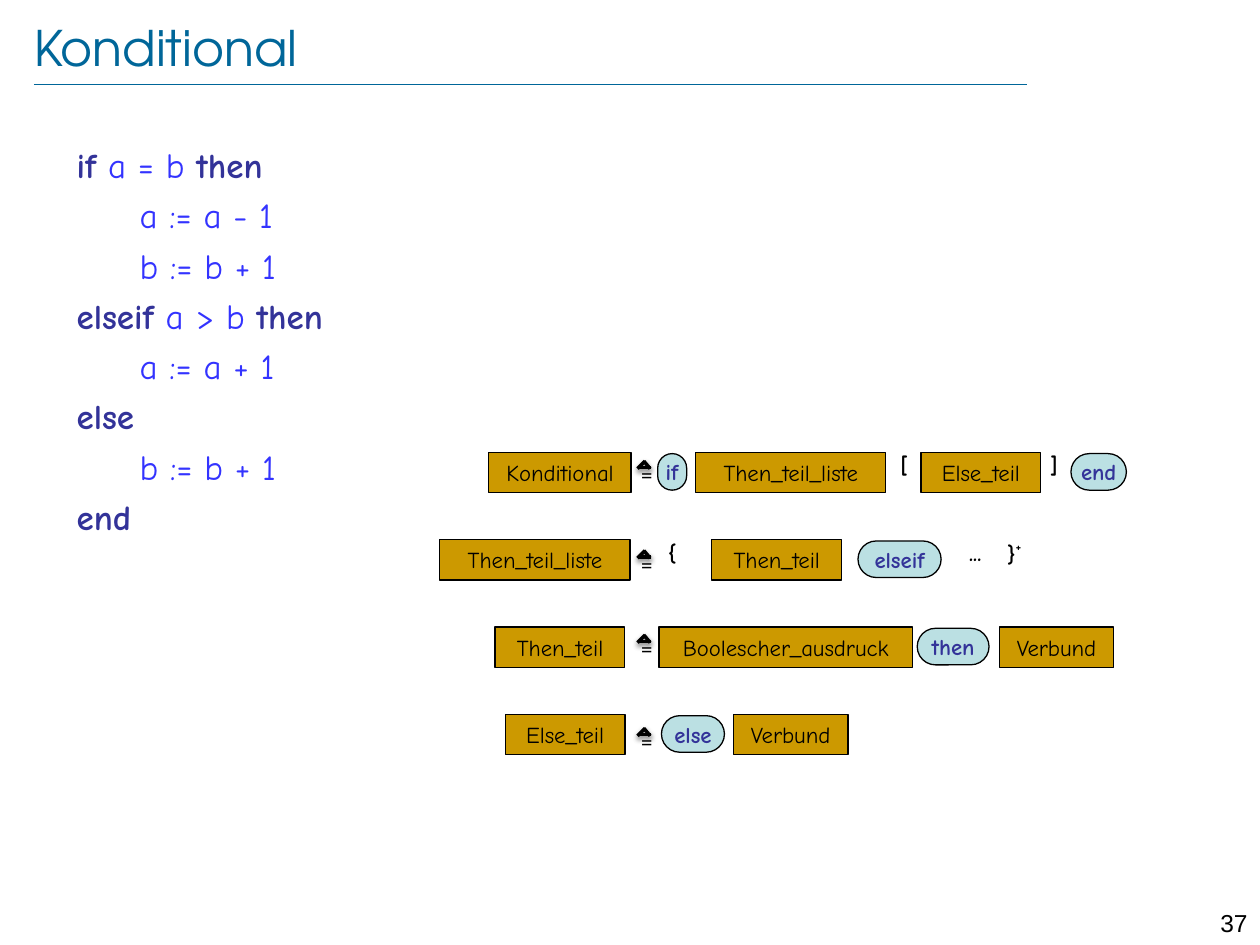
from dataclasses import dataclass

import pptx
import pptx.dml.color
import pptx.enum.shapes
import pptx.enum.text
import pptx.oxml
import pptx.util
from lxml import etree
from pptx.util import Inches

SHAPE = pptx.enum.shapes.MSO_SHAPE
ALIGN = pptx.enum.text.PP_ALIGN
ANCHOR = pptx.enum.text.MSO_ANCHOR
STRAIGHT = pptx.enum.shapes.MSO_CONNECTOR.STRAIGHT
NS = "http://schemas.openxmlformats.org/drawingml/2006/main"

COLORS = {
    "title": "006699",
    "keyword": "333399",
    "code": "3333FF",
    "rule": "CC9900",
    "terminal": "BBE0E3",
    "black": "000000",
}
FONT = "Comic Neue"


@dataclass(frozen=True)
class Token:
    """One part of a grammar rule; kind is rule, terminal or symbol."""
    kind: str
    text: str
    left: float
    width: float
    superscript: str = ""


@dataclass(frozen=True)
class Style:
    offset: float  # from the top of the row
    height: float
    shape: pptx.enum.shapes.MSO_SHAPE | None
    color: str
    bold: bool


@dataclass(frozen=True)
class Row:
    defined_as_top: float
    tokens: tuple[Token, ...]


STYLES = {
    "rule": Style(0, 0.32, SHAPE.RECTANGLE, "black", False),
    "terminal": Style(0.01, 0.29, SHAPE.ROUNDED_RECTANGLE, "keyword", True),
    "symbol": Style(-0.06, 0.32, None, "black", True),
}

FIRST_ROW, LAST_ROW = 3.59, 5.67
ROWS = (
    Row(3.61, (
        Token("rule", "Konditional", 3.88, 1.13),
        Token("terminal", "if", 5.22, 0.23),
        Token("rule", "Then_teil_liste", 5.52, 1.51),
        Token("symbol", "[", 7.04, 0.27),
        Token("rule", "Else_teil", 7.31, 0.95),
        Token("symbol", "]", 8.23, 0.27),
        Token("terminal", "end", 8.5, 0.44),
    )),
    Row(4.32, (
        Token("rule", "Then_teil_liste", 3.49, 1.51),
        Token("symbol", "{", 5.2, 0.27),
        Token("rule", "Then_teil", 5.65, 1.03),
        Token("terminal", "elseif", 6.81, 0.66),
        Token("symbol", "...", 7.52, 0.44),
        Token("symbol", "}", 7.88, 0.34, "+"),
    )),
    Row(4.99, (
        Token("rule", "Then_teil", 3.93, 1.03),
        Token("rule", "Boolescher_ausdruck", 5.23, 2.01),
        Token("terminal", "then", 7.28, 0.57),
        Token("rule", "Verbund", 7.93, 0.91),
    )),
    Row(5.73, (
        Token("rule", "Else_teil", 4.01, 0.95),
        Token("terminal", "else", 5.25, 0.5),
        Token("rule", "Verbund", 5.82, 0.91),
    )),
)

KEYWORDS = ("if", "then", "elseif", "else", "end")
CODE = (
    ("if", " a = b ", "then"),
    ("\ta := a - 1",),
    ("\tb := b + 1",),
    ("elseif", " a > b ", "then"),
    ("\ta := a + 1",),
    ("else",),
    ("\tb := b + 1",),
    ("end",),
)

# Strokes of the small triangle above "=": x1, y1, x2, y2 from the sign's top
TRIANGLE = (
    (5.11, 0.05, 5.16, 0.11),
    (5.12, 0.05, 5.06, 0.11),
    (5.17, 0.1, 5.06, 0.1),
)


def rgb(name: str) -> pptx.dml.color.RGBColor:
    return pptx.dml.color.RGBColor.from_string(COLORS[name])


def add_run(p, text: str, *, size: float = 13, color: str = "black",
            bold: bool = False, font: str = FONT):
    r = p.add_run()
    r.text = text
    r.font.name = font
    r.font.size = pptx.util.Pt(size)
    r.font.bold = bold
    r.font.color.rgb = rgb(color)
    return r


def add_box(shapes, left: float, top: float, width: float, height: float,
            wrap: bool = True):
    sp = shapes.add_textbox(Inches(left), Inches(top), Inches(width), Inches(height))
    sp.text_frame.word_wrap = wrap
    return sp


def add_line(shapes, x1: float, y1: float, x2: float, y2: float,
             color: str, weight: float):
    """Draw a line and return its empty effect list."""
    line = shapes.add_connector(STRAIGHT, Inches(x1), Inches(y1), Inches(x2), Inches(y2))
    line.line.color.rgb = rgb(color)
    line.line.width = pptx.util.Pt(weight)
    return etree.SubElement(line._element.spPr, f"{{{NS}}}effectLst")


def add_token(s, token: Token, row_top: float) -> None:
    style = STYLES[token.kind]
    top = row_top + style.offset
    if style.shape is None:
        sp = add_box(s.shapes, token.left, top, token.width, style.height, wrap=False)
    else:
        sp = s.shapes.add_shape(style.shape, Inches(token.left), Inches(top),
                                Inches(token.width), Inches(style.height))
        if style.shape == SHAPE.ROUNDED_RECTANGLE:
            sp.adjustments[0] = 0.5
        sp.shadow.inherit = False
        sp.fill.solid()
        sp.fill.fore_color.rgb = rgb(token.kind)
        sp.line.color.rgb = rgb("black")
        sp.line.width = pptx.util.Pt(0.75)
        sp.text_frame.vertical_anchor = ANCHOR.MIDDLE
    tf = sp.text_frame
    tf.word_wrap = False
    p = tf.paragraphs[0]
    p.alignment = ALIGN.CENTER
    add_run(p, token.text, color=style.color, bold=style.bold)
    if token.superscript:
        r = add_run(p, token.superscript, color=style.color, bold=style.bold)
        r.font._element.set("baseline", "50000")


def add_defined_as(s, top: float) -> None:
    """Draw an equals sign with a small shadowed triangle above it."""
    shapes = s.shapes.add_group_shape().shapes
    sp = add_box(shapes, 4.99, top, 0.24, 0.32)
    add_run(sp.text_frame.paragraphs[0], "=", font="Calibri")
    for x1, y1, x2, y2 in TRIANGLE:
        effects = add_line(shapes, x1, top + y1, x2, top + y2, "black", 2)
        effects.append(pptx.oxml.parse_xml(
            f'<a:outerShdw xmlns:a="{NS}" blurRad="{pptx.util.Pt(3.1)}" '
            f'dist="{pptx.util.Pt(1.6)}" dir="5400000" rotWithShape="0">'
            f'<a:srgbClr val="{COLORS["black"]}"><a:alpha val="38000"/></a:srgbClr>'
            '</a:outerShdw>'))


def add_title(s, text: str) -> None:
    sp = s.shapes.title
    sp.left, sp.top, sp.width, sp.height = map(Inches, (0.27, 0.13, 8.88, 0.48))
    tf = sp.text_frame
    tf.margin_left = tf.margin_top = tf.margin_right = tf.margin_bottom = 0
    tf.vertical_anchor = ANCHOR.MIDDLE
    p = tf.paragraphs[0]
    p.alignment = ALIGN.LEFT
    add_run(p, text, size=28, color="title", font="TeX Gyre Adventor")
    add_line(s.shapes, 0.27, 0.67, 8.15, 0.67, "title", 0.25)


def add_code(s) -> None:
    tf = add_box(s.shapes, 0.51, 1.09, 4.52, 5.59).text_frame
    for i, parts in enumerate(CODE):
        p = tf.add_paragraph() if i else tf.paragraphs[0]
        if i:
            p.space_before = pptx.util.Pt(4.7)
        for part in parts:
            keyword = part in KEYWORDS
            add_run(p, part, size=20, color="keyword" if keyword else "code", bold=keyword)


def main() -> None:
    prs = pptx.Presentation()
    prs.slide_width, prs.slide_height = Inches(10), Inches(7.5)
    s = prs.slides.add_slide(prs.slide_layouts[5])
    add_title(s, "Konditional")
    add_code(s)
    step = (LAST_ROW - FIRST_ROW) / (len(ROWS) - 1)
    for i, row in enumerate(ROWS):
        for token in row.tokens:
            add_token(s, token, FIRST_ROW + i * step)
        add_defined_as(s, row.defined_as_top)
    p = add_box(s.shapes, 9.45, 7.16, 0.55, 0.24).text_frame.paragraphs[0]
    p.alignment = ALIGN.RIGHT
    add_run(p, "37", size=14, font="Arial")
    prs.save("out.pptx")


if __name__ == "__main__":
    main()
